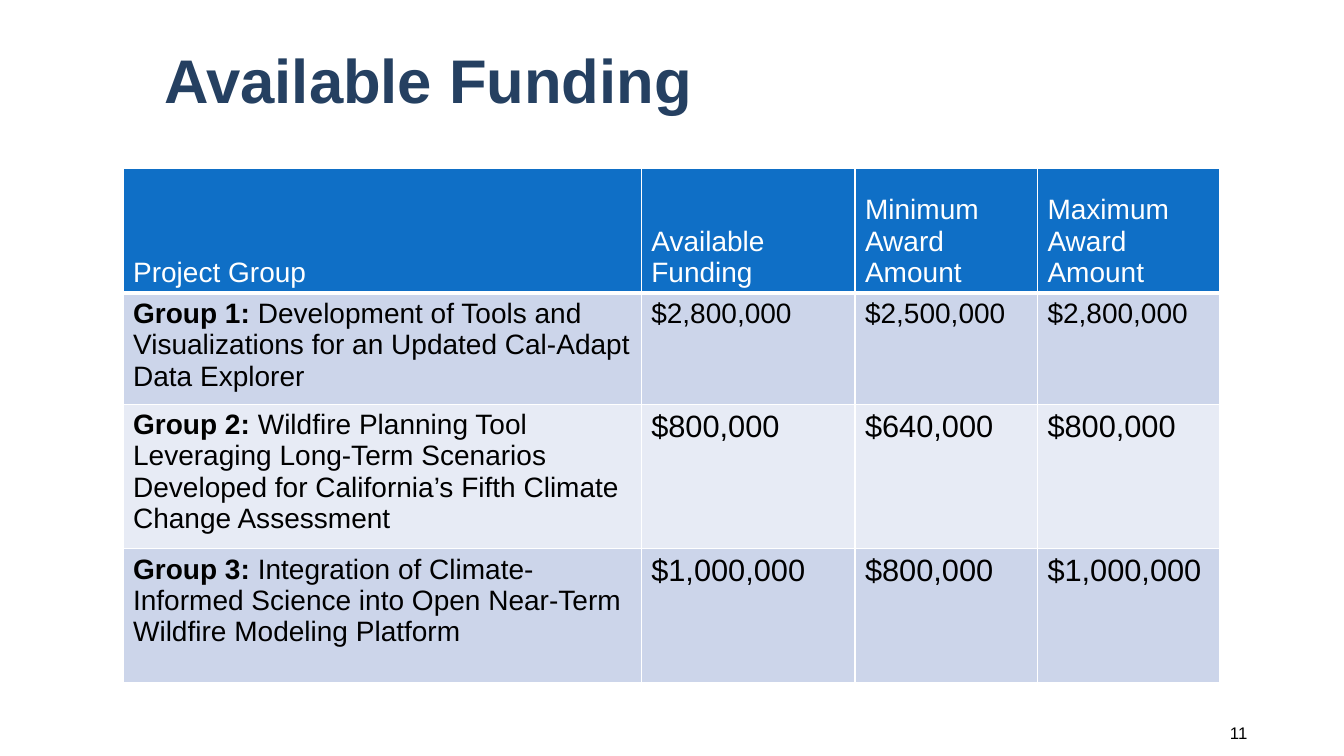
from lxml import etree
from pptx import Presentation
from pptx.dml.color import RGBColor
from pptx.enum.text import MSO_ANCHOR, PP_ALIGN
from pptx.oxml.ns import qn
from pptx.util import Inches, Pt

LEFT, RIGHT = PP_ALIGN.LEFT, PP_ALIGN.RIGHT
TOP, MIDDLE, BOTTOM = MSO_ANCHOR.TOP, MSO_ANCHOR.MIDDLE, MSO_ANCHOR.BOTTOM

FONT = "Arial"
COLORS = {
    "title": "254061",
    "header": "0F6FC6",
    "odd_row": "CCD5EA",
    "even_row": "E7EBF5",
    "white": "FFFFFF",
    "black": "000000",
}

COLUMN_WIDTHS = (5.14, 2.12, 1.81, 1.81)
ROW_HEIGHTS = (1.24, 1.03, 1.34, 1.33)
HEADINGS = ("Project Group", "Available Funding",
            "Minimum Award Amount", "Maximum Award Amount")
# Project, amounts, size of the amounts
GROUPS = (
    ("Development of Tools and Visualizations for an Updated Cal-Adapt Data Explorer",
     ("$2,800,000", "$2,500,000", "$2,800,000"), 20),
    ("Wildfire Planning Tool Leveraging Long-Term Scenarios Developed for "
     "California’s Fifth Climate Change Assessment",
     ("$800,000", "$640,000", "$800,000"), 22),
    ("Integration of Climate-Informed Science into Open Near-Term Wildfire Modeling Platform",
     ("$1,000,000", "$800,000", "$1,000,000"), 22),
)


class SlideBuilder:
    def __init__(self, deck):
        self.slide = deck.slides.add_slide(deck.slide_layouts[6])

    def add_spans(self, para, spans, size, color):
        """Add (text, bold) spans to a paragraph."""
        para.font.name = FONT
        para.font.size = Pt(size)
        para.font.color.rgb = RGBColor.from_string(COLORS[color])
        for text, bold in spans:
            span = para.add_run()
            span.text = text
            span.font.bold = bold

    def text(self, bounds, text, size, color, bold=False, align=LEFT, spacing=1.0):
        box = self.slide.shapes.add_textbox(*map(Inches, bounds))
        frame = box.text_frame
        frame.word_wrap = True
        frame.vertical_anchor = MIDDLE
        para = frame.paragraphs[0]
        para.alignment = align
        para.line_spacing = spacing
        self.add_spans(para, [(text, bold)], size, color)

    def table(self, left, top, widths, heights):
        frame = self.slide.shapes.add_table(
            len(heights), len(widths), Inches(left), Inches(top),
            Inches(sum(widths)), Inches(sum(heights)))
        table = frame.table
        for column, width in zip(table.columns, widths):
            column.width = Inches(width)
        for row, height in zip(table.rows, heights):
            row.height = Inches(height)
        return table

    def cell(self, cell, spans, size, color, fill, anchor=TOP, bottom_line=1):
        properties = cell._tc.get_or_add_tcPr()
        for side, width in (("L", 1), ("R", 1), ("T", 1), ("B", bottom_line)):
            line = etree.SubElement(properties, qn(f"a:ln{side}"), w=str(Pt(width)))
            solid = etree.SubElement(line, qn("a:solidFill"))
            etree.SubElement(solid, qn("a:srgbClr"), val=COLORS["white"])
        cell.fill.solid()
        cell.fill.fore_color.rgb = RGBColor.from_string(COLORS[fill])
        cell.vertical_anchor = anchor
        self.add_spans(cell.text_frame.paragraphs[0], spans, size, color)


def main():
    deck = Presentation()
    deck.slide_width = Inches(13.33)
    deck.slide_height = Inches(7.5)
    page = SlideBuilder(deck)

    # Title
    page.text((1.53, 0.26, 10.89, 1.14), "Available Funding", 44, "title",
              bold=True, spacing=0.9)

    # Funding table
    table = page.table(1.22, 1.67, COLUMN_WIDTHS, ROW_HEIGHTS)
    for column, heading in enumerate(HEADINGS):
        page.cell(table.cell(0, column), [(heading, False)], 20, "white", "header",
                  anchor=BOTTOM, bottom_line=3)
    for row, (project, amounts, size) in enumerate(GROUPS, start=1):
        fill = "odd_row" if row % 2 else "even_row"
        page.cell(table.cell(row, 0), [(f"Group {row}: ", True), (project, False)],
                  20, "black", fill)
        for column, amount in enumerate(amounts, start=1):
            page.cell(table.cell(row, column), [(amount, False)], size, "black", fill)

    # Slide number
    page.text((10.5, 7.07, 1.97, 0.4), "11", 12, "black", align=RIGHT)

    deck.save("out.pptx")


if __name__ == "__main__":
    main()
